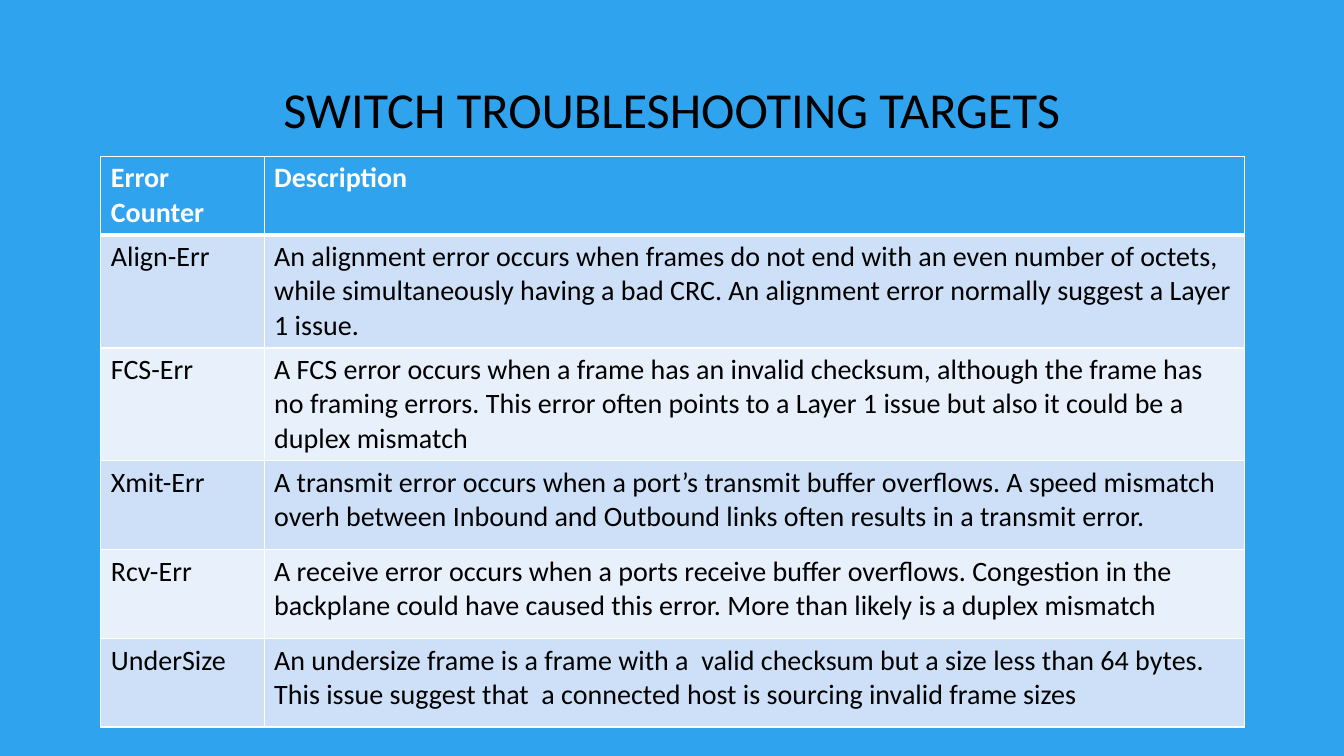
from lxml.etree import SubElement
from pptx import Presentation
from pptx.dml.color import RGBColor
from pptx.enum.text import MSO_ANCHOR, PP_ALIGN
from pptx.oxml.ns import qn
from pptx.util import Inches, Pt

FONT = "Calibri"
BLUE, WHITE, BLACK = "2FA3EE", "FFFFFF", "000000"
BANDS = ["CDE0F8", "E8F0FC"]
LEFT, WIDTH = 1, 11.33
COLUMN_WIDTHS = [1.62, 9.72]
HEADER_HEIGHT, ROW_HEIGHT = 0.51, 0.88
ERROR_COUNTERS = [
    ("Error Counter", "Description"),
    ("Align-Err", "An alignment error occurs when frames do not end with an even number of octets, "
     "while simultaneously having a bad CRC. An alignment error normally suggest a Layer 1 issue."),
    ("FCS-Err", "A FCS error occurs when a frame has an invalid checksum, although the frame has "
     "no framing errors. This error often points to a Layer 1 issue but also it could be a "
     "duplex mismatch"),
    ("Xmit-Err", "A transmit error occurs when a port’s transmit buffer overflows. A speed mismatch "
     "overh between Inbound and Outbound links often results in a transmit error."),
    ("Rcv-Err", "A receive error occurs when a ports receive buffer overflows. Congestion in the "
     "backplane could have caused this error. More than likely is a duplex mismatch"),
    ("UnderSize", "An undersize frame is a frame with a  valid checksum but a size less than 64 bytes. "
     "This issue suggest that  a connected host is sourcing invalid frame sizes"),
]


def paint(color_format, color):
    """Set a colour from a hex string."""
    color_format.rgb = RGBColor.from_string(color)


def style_text(paragraph, size, color, bold=False):
    """Format every run of a paragraph."""
    for run in paragraph.runs:
        run.font.name = FONT
        run.font.size = Pt(size)
        run.font.bold = bold
        paint(run.font.color, color)


def add_borders(cell, top, bottom):
    """Draw white cell borders, with the given top and bottom widths in points."""
    properties = cell._tc.get_or_add_tcPr()
    for side, width in (("L", 1), ("R", 1), ("T", top), ("B", bottom)):
        line = SubElement(properties, qn(f"a:ln{side}"), w=str(Pt(width)))
        fill = SubElement(line, qn("a:solidFill"))
        SubElement(fill, qn("a:srgbClr"), val=WHITE)


def add_title(slide, left, top, width, height):
    """Place the centred slide title in its box."""
    title = slide.shapes.title
    title.left, title.top, title.width, title.height = map(Inches, (left, top, width, height))
    title.text_frame.text = "SWITCH TROUBLESHOOTING TARGETS"
    title.text_frame.vertical_anchor = MSO_ANCHOR.MIDDLE
    paragraph = title.text_frame.paragraphs[0]
    paragraph.alignment = PP_ALIGN.CENTER
    paragraph.line_spacing = 0.9
    style_text(paragraph, 36, BLACK)


def add_counter_table(slide, left, top, width):
    """Build the banded table of error counters in its box."""
    row_count = len(ERROR_COUNTERS)
    height = HEADER_HEIGHT + (row_count - 1) * ROW_HEIGHT
    table = slide.shapes.add_table(
        row_count, len(COLUMN_WIDTHS), *map(Inches, (left, top, width, height))).table
    for column, column_width in zip(table.columns, COLUMN_WIDTHS):
        column.width = Inches(column_width)
    for row_index, texts in enumerate(ERROR_COUNTERS):
        header = row_index == 0
        table.rows[row_index].height = Inches(HEADER_HEIGHT if header else ROW_HEIGHT)
        for cell, text in zip(table.rows[row_index].cells, texts):
            add_borders(cell, 3 if row_index == 1 else 1, 3 if header else 1)
            cell.fill.solid()
            paint(cell.fill.fore_color, BLUE if header else BANDS[(row_index - 1) % 2])
            cell.text_frame.text = text
            style_text(cell.text_frame.paragraphs[0], 20, WHITE if header else BLACK, header)


def main():
    """Build and save the slide."""
    presentation = Presentation()
    presentation.slide_width, presentation.slide_height = Inches(13.33), Inches(7.5)
    slide = presentation.slides.add_slide(presentation.slide_layouts[5])
    slide.background.fill.solid()
    paint(slide.background.fill.fore_color, BLUE)
    add_title(slide, LEFT, 0.68, WIDTH, 0.87)
    add_counter_table(slide, LEFT, 1.55, WIDTH)
    presentation.save("out.pptx")


if __name__ == "__main__":
    main()
